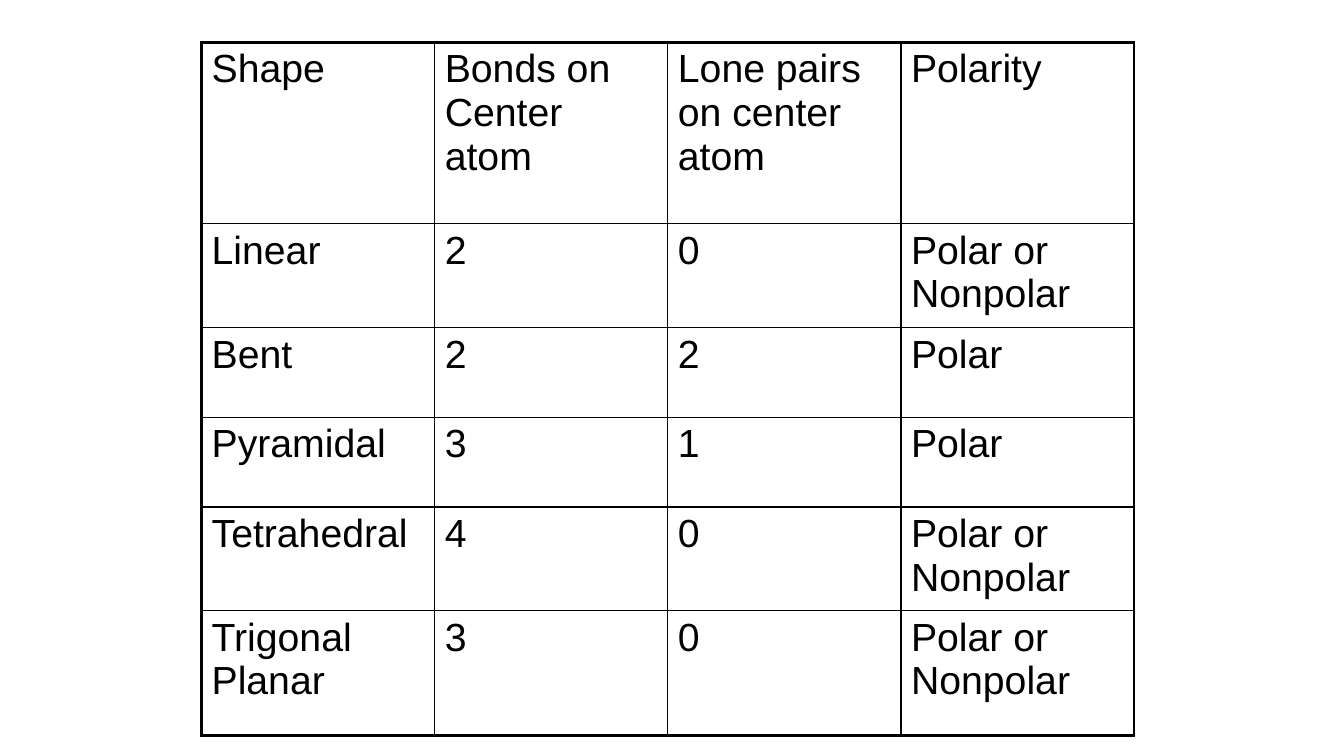
from lxml import etree
from pptx import Presentation
from pptx.dml.color import RGBColor
from pptx.oxml.ns import qn
from pptx.util import Inches, Pt

SLIDE_W, SLIDE_H = 13.33, 7.5
BLANK_LAYOUT = 6

ROWS = [
    ("Shape", "Bonds on Center atom", "Lone pairs on center atom", "Polarity"),
    ("Linear", "2", "0", "Polar or Nonpolar"),
    ("Bent", "2", "2", "Polar"),
    ("Pyramidal", "3", "1", "Polar"),
    ("Tetrahedral", "4", "0", "Polar or Nonpolar"),
    ("Trigonal Planar", "3", "0", "Polar or Nonpolar"),
]
ROW_HEIGHTS = [1.8, 1.03, 0.89, 0.89, 1.03, 1.24]


def rgb(value):
    return RGBColor.from_string(value)


class SlideBuilder:
    font = "Arial"
    size = 28
    ink = "000000"
    outer = 2.25
    inner = 1

    def __init__(self, prs):
        self.s = prs.slides.add_slide(prs.slide_layouts[BLANK_LAYOUT])

    def table(self, rows, left, top, width, heights):
        n_rows, n_cols = len(rows), len(rows[0])
        frame = self.s.shapes.add_table(
            n_rows, n_cols, Inches(left), Inches(top),
            Inches(width), Inches(sum(heights)))
        table = frame.table
        table.first_row = False
        table.horz_banding = False
        for column in table.columns:
            column.width = Inches(width / n_cols)
        for i, (texts, height) in enumerate(zip(rows, heights)):
            table.rows[i].height = Inches(height)
            for j, text in enumerate(texts):
                cell = table.cell(i, j)
                self.cell_text(cell, text)
                self.borders(cell, {
                    "L": j == 0,
                    "R": j == n_cols - 1,
                    "T": i == 0,
                    "B": i == n_rows - 1,
                })

    def cell_text(self, cell, text):
        cell.fill.background()
        cell.margin_left = cell.margin_right = Inches(0.1)
        cell.margin_top = cell.margin_bottom = Inches(0.05)
        p = cell.text_frame.paragraphs[0]
        p.text = text
        p.font.name = self.font
        p.font.size = Pt(self.size)
        p.font.color.rgb = rgb(self.ink)

    def borders(self, cell, edges):
        tc_pr = cell._tc.get_or_add_tcPr()
        for index, (side, is_outer) in enumerate(edges.items()):
            weight = self.outer if is_outer else self.inner
            ln = etree.Element(qn(f"a:ln{side}"), w=str(Pt(weight)))
            fill = etree.SubElement(ln, qn("a:solidFill"))
            etree.SubElement(fill, qn("a:srgbClr"), val=self.ink)
            tc_pr.insert(index, ln)


def main():
    prs = Presentation()
    prs.slide_width = Inches(SLIDE_W)
    prs.slide_height = Inches(SLIDE_H)
    slide = SlideBuilder(prs)
    slide.table(ROWS, left=0.15 * SLIDE_W, top=0.056 * SLIDE_H,
                width=9.25, heights=ROW_HEIGHTS)
    prs.save("out.pptx")


if __name__ == "__main__":
    main()
